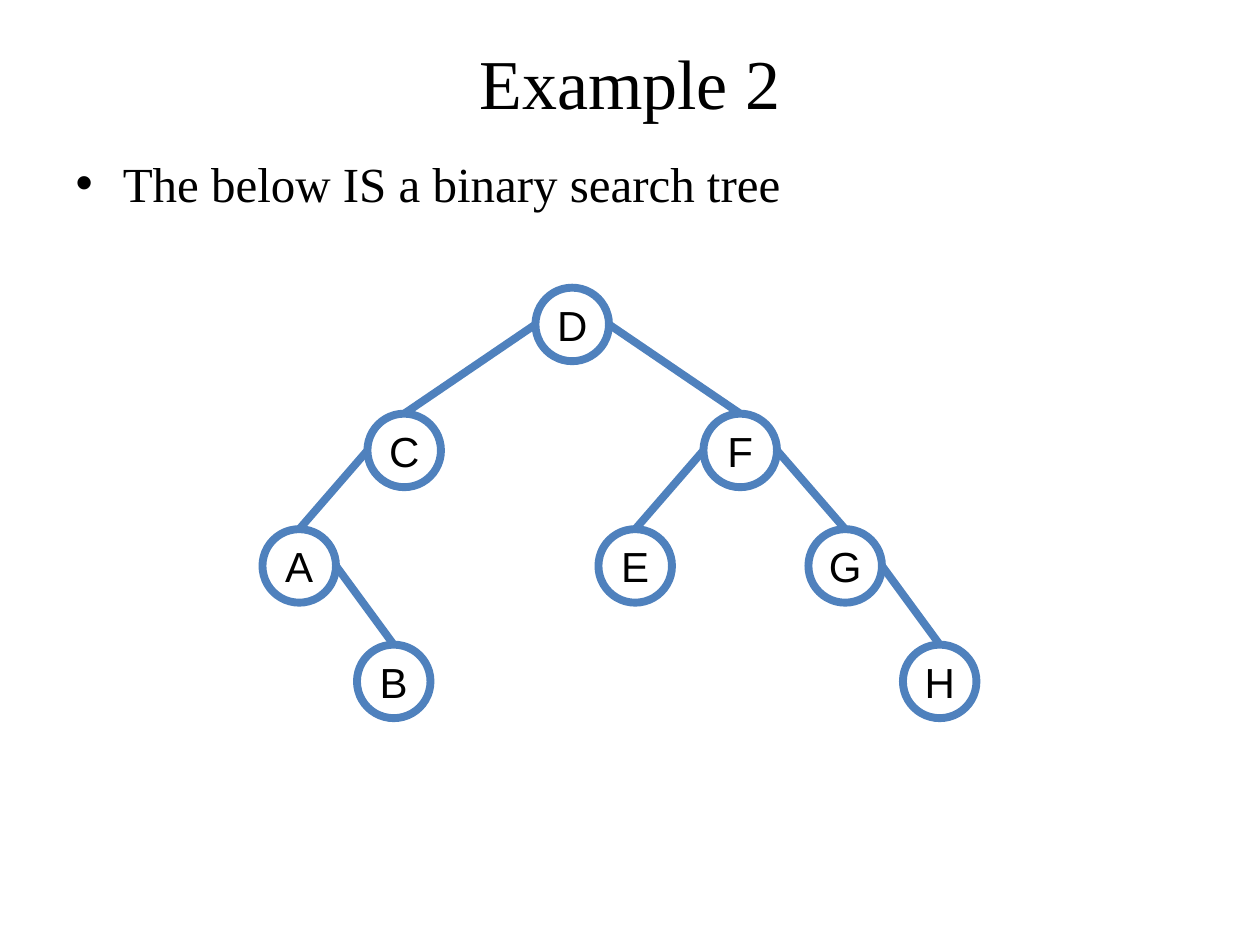
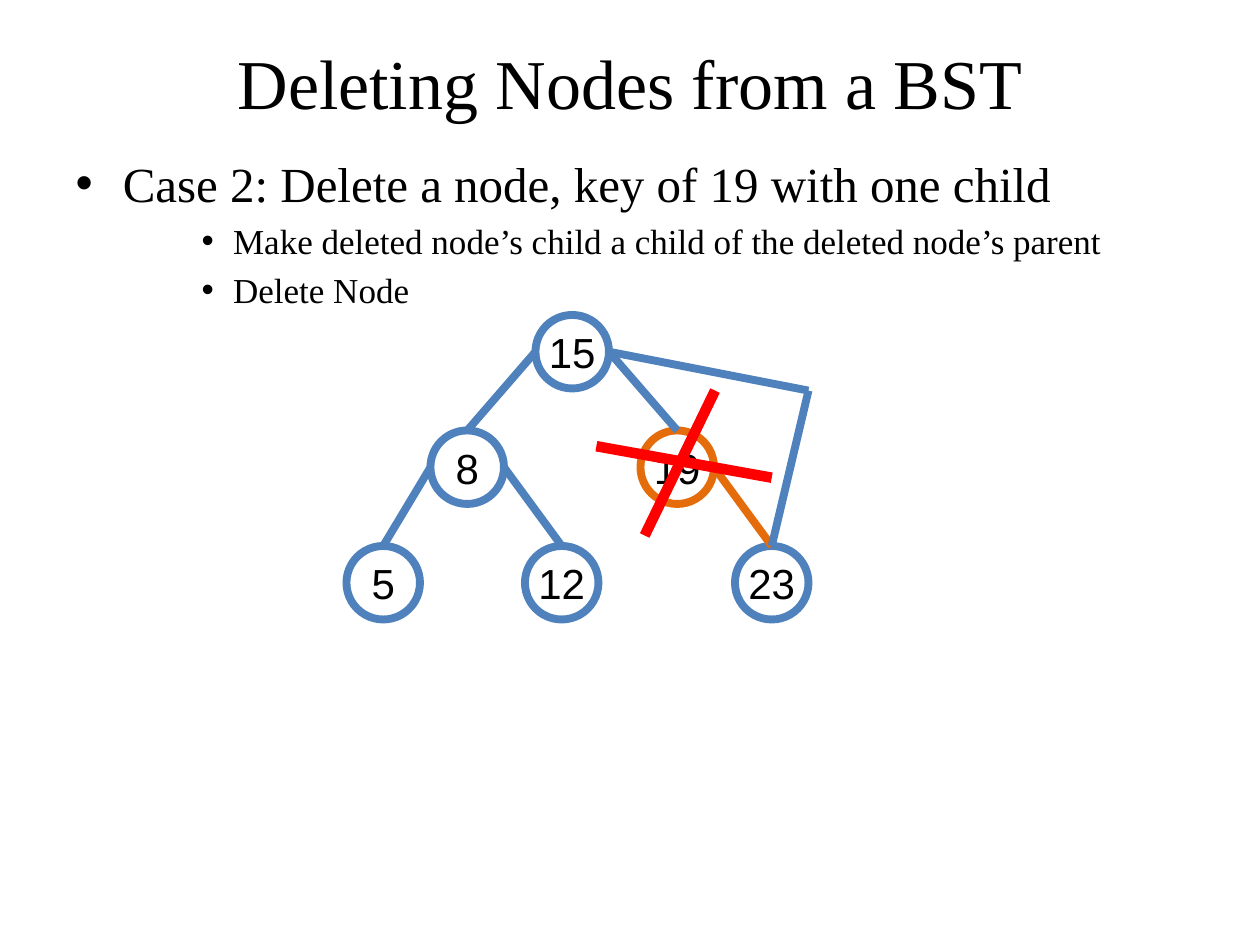
import pptx
import pptx.dml.color
import pptx.enum.shapes
import pptx.enum.text
import pptx.oxml.ns
import pptx.util
import lxml.etree

SERIF, SANS = "Times New Roman", "Arial"
BLACK, BLUE, ORANGE, RED = "000000", "4F81BD", "E46C0A", "FF0000"

# The slide is a grid of square cells, twelve to the inch
COLS, ROWS = 120, 90
NODE = 7
LABEL_H = 6
MARGIN, CONTENT_W = 6, 108
TITLE_TOP, TITLE_H = 3.6, 8.4
BODY_TOP = 14
LAYOUT_TITLE_BODY = 1

prs = pptx.Presentation()
prs.slide_width = pptx.util.Inches(10)
prs.slide_height = pptx.util.Inches(7.5)
CELL = prs.slide_width / COLS


def cells(*counts):
    return [round(n * CELL) for n in counts]


def rgb(hex_color):
    return pptx.dml.color.RGBColor.from_string(hex_color)


def add_text(p, text, *, size, font=SERIF, color=BLACK, align=None):
    r = p.add_run()
    r.text = text
    r.font.size = pptx.util.Pt(size)
    r.font.name = font
    r.font.color.rgb = rgb(color)
    if align is not None:
        p.alignment = align


def style_line(line, color, width):
    line.color.rgb = rgb(color)
    line.width = pptx.util.Pt(width)


def add_line(s, start, end, color=BLUE, width=4.5):
    line = s.shapes.add_connector(
        pptx.enum.shapes.MSO_CONNECTOR.STRAIGHT, *cells(*start, *end))
    style_line(line.line, color, width)
    # Empty effect list removes the theme shadow
    lxml.etree.SubElement(line._element.spPr, pptx.oxml.ns.qn("a:effectLst"))


def fill_placeholder(sp, box, paragraphs):
    """Move a placeholder and fill it with (text, level, size) paragraphs."""
    sp.left, sp.top, sp.width, sp.height = cells(*box)
    tf = sp.text_frame
    tf.auto_size = pptx.enum.text.MSO_AUTO_SIZE.NONE
    for i, (text, level, size) in enumerate(paragraphs):
        p = tf.add_paragraph() if i else tf.paragraphs[0]
        p.level = level
        add_text(p, text, size=size)


def add_content_slide(title, body, body_h):
    s = prs.slides.add_slide(prs.slide_layouts[LAYOUT_TITLE_BODY])
    fill_placeholder(s.shapes.title, (MARGIN, TITLE_TOP, CONTENT_W, TITLE_H),
                     [(title, 0, 40)])
    fill_placeholder(s.placeholders[1], (MARGIN, BODY_TOP, CONTENT_W, body_h), body)
    return s


def add_node(s, x, y, key, color):
    sp = s.shapes.add_shape(pptx.enum.shapes.MSO_SHAPE.OVAL, *cells(x, y, NODE, NODE))
    sp.shadow.inherit = False
    sp.fill.background()
    style_line(sp.line, color, 4.5)

    label = s.shapes.add_textbox(*cells(x, y + (NODE - LABEL_H) / 2, NODE, LABEL_H))
    tf = label.text_frame
    tf.word_wrap = False
    tf.auto_size = pptx.enum.text.MSO_AUTO_SIZE.SHAPE_TO_FIT_TEXT
    tf.vertical_anchor = pptx.enum.text.MSO_ANCHOR.MIDDLE
    add_text(tf.paragraphs[0], key, size=24, font=SANS,
             align=pptx.enum.text.PP_ALIGN.CENTER)


def top_of(node):
    return node[0] + NODE / 2, node[1]


def side_of(node, toward):
    return node[0] + (NODE if toward[0] > node[0] else 0), node[1] + NODE / 2


def add_tree(s, left, top, nodes, edges, marked=()):
    """Draw nodes {key: (column, row)} from the corner; return their places."""
    def color_of(key):
        return ORANGE if key in marked else BLUE

    placed = {key: (left + col, top + row) for key, (col, row) in nodes.items()}
    for key, (x, y) in placed.items():
        add_node(s, x, y, key, color_of(key))
    for parent, child in edges:
        start = side_of(placed[parent], placed[child])
        add_line(s, start, top_of(placed[child]), color_of(parent))
    return placed


def add_cross(s, node):
    cx, cy = node[0] + NODE / 2, node[1] + NODE / 2
    for x1, y1, x2, y2 in ((-3.1, 6.5, 3.6, -7.3), (-7.7, -2, 9, 1)):
        add_line(s, (cx + x1, cy + y1), (cx + x2, cy + y2), RED, 6)


def add_detour(s, parent, child, corner):
    add_line(s, corner, top_of(child))
    add_line(s, side_of(parent, child), corner)


def build_example():
    s = add_content_slide("Example 2", [("The below IS a binary search tree", 0, 28)], 7)
    nodes = {"D": (26, 0), "C": (10, 12), "F": (42, 12), "A": (0, 23),
             "E": (32, 23), "G": (52, 23), "B": (9, 34), "H": (61, 34)}
    add_tree(s, 25, 27.4, nodes, ("DC", "DF", "CA", "FE", "FG", "AB", "GH"))


def build_deletion():
    s = add_content_slide("Deleting Nodes from a BST", [
        ("Case 2: Delete a node, key of 19 with one child", 0, 28),
        ("Make deleted node’s child a child of the deleted node’s parent", 2, 20),
        ("Delete Node", 2, 20),
    ], 66.4)
    nodes = {"15": (18, 0), "8": (8, 11), "19": (28, 11),
             "5": (0, 22), "12": (17, 22), "23": (37, 22)}
    edges = (("15", "8"), ("15", "19"), ("8", "5"), ("8", "12"), ("19", "23"))
    placed = add_tree(s, 33, 30, nodes, edges, marked=("19",))
    add_cross(s, placed["19"])
    add_detour(s, placed["15"], placed["23"], (77, 37.2))


def main():
    build_example()
    build_deletion()
    prs.save("out.pptx")


if __name__ == "__main__":
    main()
